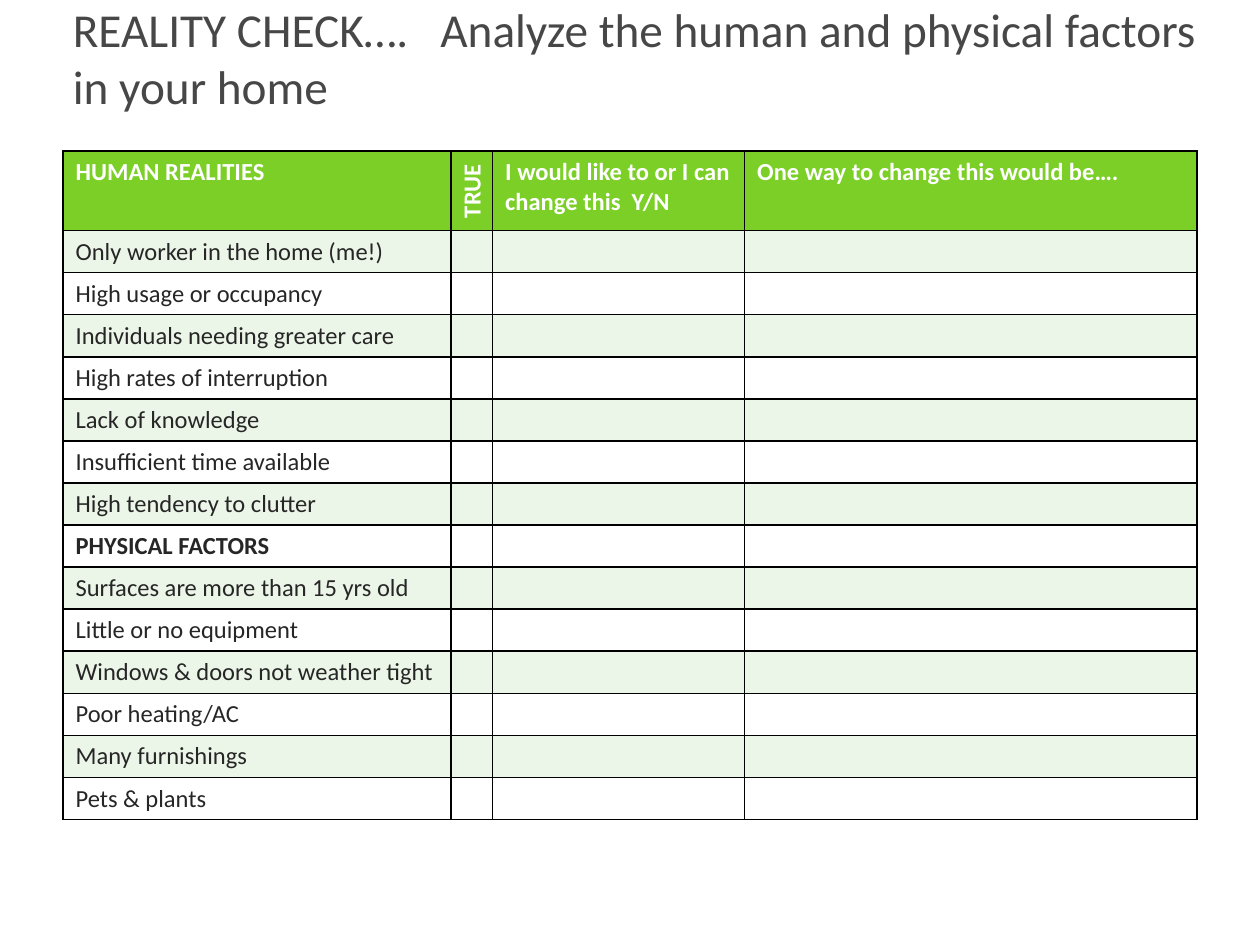
import pptx
import pptx.dml.color
import pptx.enum.text
import pptx.oxml
import pptx.oxml.ns
import pptx.util
import lxml.etree

Inches = pptx.util.Inches
Pt = pptx.util.Pt
qn = pptx.oxml.ns.qn

FACE = "Calibri"
SIZE = 14
WIDTHS = [3.08, 0.33, 2, 3.59]
HEAD_HIGH = 0.63
ROW_HIGH = 0.33
HEADS = [
    "HUMAN REALITIES",
    "TRUE",
    "I would like to or I can change this  Y/N",
    "One way to change this would be….",
]
HUMAN = [
    "Only worker in the home (me!)",
    "High usage or occupancy",
    "Individuals needing greater care",
    "High rates of interruption",
    "Lack of knowledge",
    "Insufficient time available",
    "High tendency to clutter",
]
GROUP = "PHYSICAL FACTORS"
PHYSICAL = [
    "Surfaces are more than 15 yrs old",
    "Little or no equipment",
    "Windows & doors not weather tight",
    "Poor heating/AC",
    "Many furnishings",
    "Pets & plants",
]


def color(code):
    return pptx.dml.color.RGBColor.from_string(code)


def add_run(para, text, size, code, bold=False):
    run = para.add_run()
    run.text = text
    run.font.name = FACE
    run.font.size = Pt(size)
    run.font.bold = bold
    run.font.color.rgb = color(code)


def add_title(slide, text):
    box = slide.shapes.add_textbox(Inches(0.48), Inches(0.08), Inches(9.19), Inches(0.75))
    frame = box.text_frame
    frame.word_wrap = True
    frame.vertical_anchor = pptx.enum.text.MSO_ANCHOR.MIDDLE
    add_run(frame.paragraphs[0], text, 27, "474747")


def add_edges(cell):
    props = cell._tc.get_or_add_tcPr()
    for spot, side in enumerate(["lnL", "lnR", "lnT", "lnB"]):
        line = lxml.etree.Element(qn("a:" + side), w=str(Pt(1)))
        fill = lxml.etree.SubElement(line, qn("a:solidFill"))
        lxml.etree.SubElement(fill, qn("a:srgbClr"), val="000000")
        props.insert(spot, line)


def fill_cell(cell, text, back, code, bold):
    cell.fill.solid()
    cell.fill.fore_color.rgb = color(back)
    add_edges(cell)
    para = cell.text_frame.paragraphs[0]
    if text:
        add_run(para, text, SIZE, code, bold)
    else:
        lxml.etree.SubElement(para._p, qn("a:endParaRPr"), sz=str(SIZE * 100))


def add_grid(slide):
    rows = [HEADS] + [[label, "", "", ""] for label in HUMAN + [GROUP] + PHYSICAL]
    high = HEAD_HIGH + ROW_HIGH * (len(rows) - 1)
    frame = slide.shapes.add_table(
        len(rows), len(WIDTHS), Inches(0.5), Inches(1.2), Inches(sum(WIDTHS)), Inches(high)
    )
    table = frame.table
    for col, wide in zip(table.columns, WIDTHS):
        col.width = Inches(wide)
    for r, row in enumerate(rows):
        head = r == 0
        table.rows[r].height = Inches(HEAD_HIGH if head else ROW_HIGH)
        back = "7BCF27" if head else "ECF6E8" if r % 2 else "FFFFFF"
        code = "FFFFFF" if head else "262626"
        for c, text in enumerate(row):
            fill_cell(table.cell(r, c), text, back, code, head or text == GROUP)
    table.cell(0, 1)._tc.get_or_add_tcPr().set("vert", "vert270")


def main():
    deck = pptx.Presentation()
    deck.slide_width = Inches(10)
    deck.slide_height = Inches(7.5)
    slide = deck.slides.add_slide(deck.slide_layouts[6])
    add_title(slide, "REALITY CHECK….   Analyze the human and physical factors in your home")
    add_grid(slide)
    deck.save("out.pptx")


if __name__ == "__main__":
    main()
